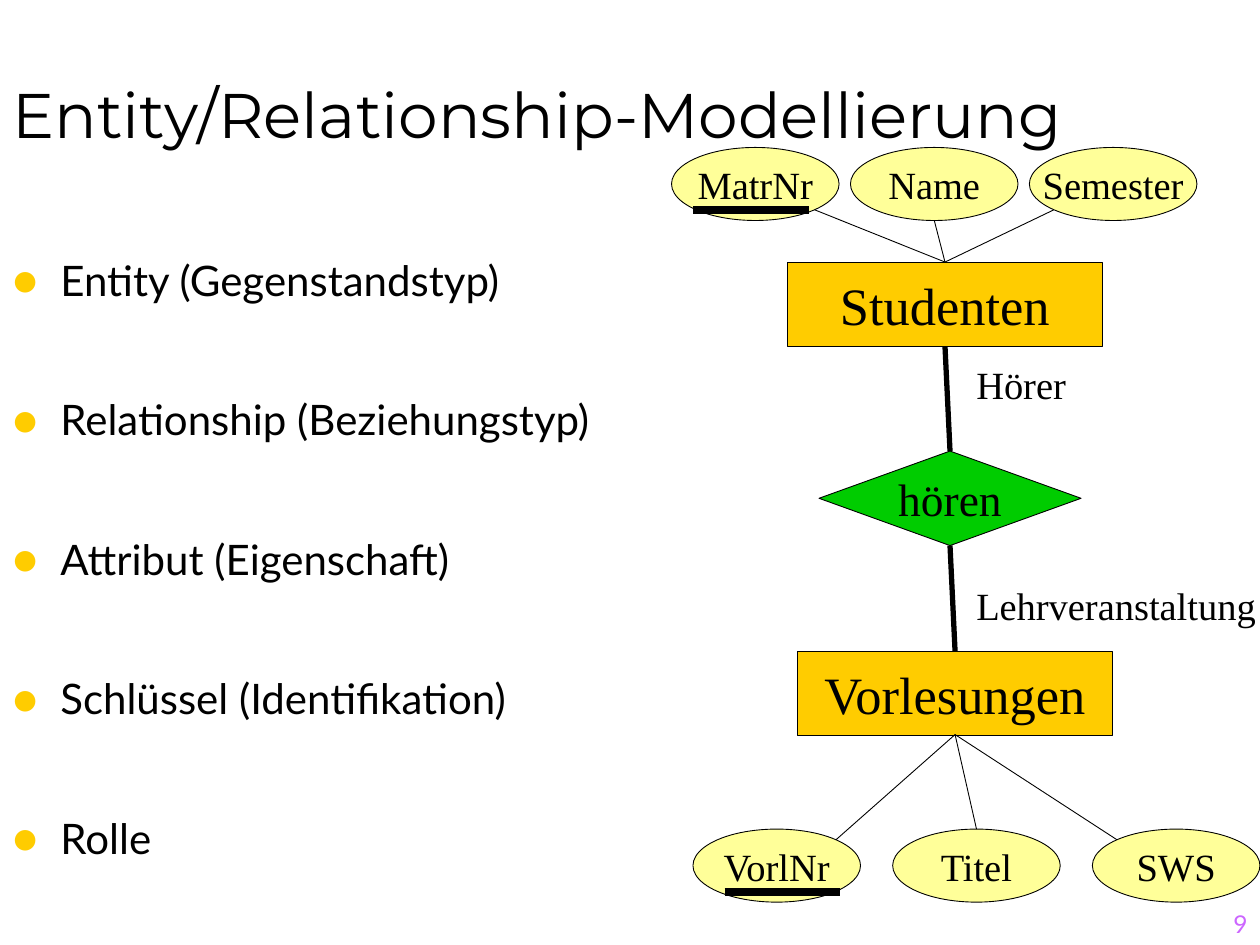
import math

from lxml import etree
from pptx import Presentation
from pptx.dml.color import RGBColor
from pptx.enum import shapes, text
from pptx.oxml import ns
from pptx.util import Inches, Pt

BLACK = RGBColor(0x00, 0x00, 0x00)
GOLD = RGBColor(0xFF, 0xCC, 0x00)
GREEN = RGBColor(0x00, 0xCC, 0x00)
YELLOW = RGBColor(0xFF, 0xFF, 0x99)
VIOLET = RGBColor(0xCC, 0x66, 0xFF)

HEADING_FONT, BODY_FONT, DIAGRAM_FONT = "Montserrat", "Lato", "Times New Roman"
SHAPE = shapes.MSO_SHAPE
ATTRIBUTE_WIDTH, ATTRIBUTE_HEIGHT = 1.33, 0.58

TOPICS = [
    "Entity (Gegenstandstyp)",
    "Relationship (Beziehungstyp)",
    "Attribut (Eigenschaft)",
    "Schlüssel (Identifikation)",
    "Rolle",
]


def place(shape, left, top, width, height):
    shape.left, shape.top = Inches(left), Inches(top)
    shape.width, shape.height = Inches(width), Inches(height)


def add_run(paragraph, content, size, font, color=BLACK):
    run = paragraph.add_run()
    run.text = content
    run.font.size = Pt(size)
    run.font.name = font
    run.font.color.rgb = color


def set_bullet(paragraph, color, indent):
    properties = paragraph._p.get_or_add_pPr()
    properties.set("marL", str(Inches(indent)))
    properties.set("indent", str(-Inches(indent)))
    bullet_color = etree.SubElement(properties, ns.qn("a:buClr"))
    etree.SubElement(bullet_color, ns.qn("a:srgbClr"), val=str(color))
    etree.SubElement(properties, ns.qn("a:buFont"), typeface=BODY_FONT)
    etree.SubElement(properties, ns.qn("a:buChar"), char="●")


def add_title(slide, content):
    title = slide.shapes.title
    place(title, 0, 0, 10, 1.25)
    frame = title.text_frame
    frame.auto_size = text.MSO_AUTO_SIZE.NONE
    frame.vertical_anchor = text.MSO_ANCHOR.BOTTOM
    paragraph = frame.paragraphs[0]
    paragraph.alignment = text.PP_ALIGN.LEFT
    add_run(paragraph, content, 36, HEADING_FONT)


def add_topics(slide, topics):
    body = slide.placeholders[1]
    place(body, 0, 1.33, 5.25, 6)
    frame = body.text_frame
    frame.auto_size = text.MSO_AUTO_SIZE.NONE
    for index, topic in enumerate(topics):
        paragraph = frame.add_paragraph() if index else frame.paragraphs[0]
        paragraph.line_spacing = 2.6
        paragraph.space_before = Pt(4.8)
        set_bullet(paragraph, GOLD, 0.38)
        add_run(paragraph, topic, 24, BODY_FONT)


def add_node(slide, kind, box, fill, label, size):
    node = slide.shapes.add_shape(kind, *map(Inches, box))
    node.shadow.inherit = False
    node.fill.solid()
    node.fill.fore_color.rgb = fill
    node.line.color.rgb = BLACK
    node.line.width = Pt(0.5)
    frame = node.text_frame
    frame.word_wrap = False
    frame.vertical_anchor = text.MSO_ANCHOR.MIDDLE
    paragraph = frame.paragraphs[0]
    paragraph.alignment = text.PP_ALIGN.CENTER
    add_run(paragraph, label, size, DIAGRAM_FONT)


def add_line(slide, start, end, width):
    line = slide.shapes.add_connector(
        shapes.MSO_CONNECTOR.STRAIGHT, *map(Inches, (*start, *end)))
    line.line.color.rgb = BLACK
    line.line.width = Pt(width)
    etree.SubElement(line._element.spPr, ns.qn("a:effectLst"))


def add_attributes(slide, names, left, top, pitch, anchor):
    """Draw a row of three attributes, each joined to its entity at anchor."""
    below = top > anchor[1]
    diagonal = math.sqrt(0.5)
    middle = top + ATTRIBUTE_HEIGHT / 2
    for index, name in enumerate(names):
        x = left + index * pitch
        add_node(slide, SHAPE.OVAL, (x, top, ATTRIBUTE_WIDTH, ATTRIBUTE_HEIGHT),
                 YELLOW, name, 22)
        # Outer ovals are joined at the diagonal facing the entity
        side = 1 - index
        reach = diagonal if side else 1
        end = (x + ATTRIBUTE_WIDTH / 2 * (1 + side * diagonal),
               middle + (-1 if below else 1) * reach * ATTRIBUTE_HEIGHT / 2)
        add_line(slide, anchor, end, 0.5)


def add_key_mark(slide, left, top):
    add_line(slide, (left, top), (left + 0.92, top), 4.5)


def add_text_box(slide, box, content, size, font, color=BLACK):
    text_box = slide.shapes.add_textbox(*map(Inches, box))
    paragraph = text_box.text_frame.paragraphs[0]
    add_run(paragraph, content, size, font, color)
    return text_box


def add_role(slide, top, width, name):
    role = add_text_box(slide, (7.65, top, width, 0.47), name, 22, DIAGRAM_FONT)
    role.text_frame.word_wrap = False
    role.text_frame.auto_size = text.MSO_AUTO_SIZE.SHAPE_TO_FIT_TEXT


def add_page_number(slide, number):
    box = add_text_box(slide, (7.92, 7, 2.08, 0.5), number, 14, BODY_FONT, VIOLET)
    frame = box.text_frame
    frame.word_wrap = True
    frame.vertical_anchor = text.MSO_ANCHOR.BOTTOM
    frame.paragraphs[0].alignment = text.PP_ALIGN.RIGHT
    frame.paragraphs[0].space_before = Pt(7)


def main():
    presentation = Presentation()
    presentation.slide_width, presentation.slide_height = Inches(10), Inches(7.5)
    slide = presentation.slides.add_slide(presentation.slide_layouts[1])

    add_page_number(slide, "9")
    add_title(slide, "Entity/Relationship-Modellierung")
    add_topics(slide, TOPICS)

    # Entities and the relationship between them
    add_node(slide, SHAPE.RECTANGLE, (6.25, 2.08, 2.5, 0.67), GOLD, "Studenten", 30)
    add_node(slide, SHAPE.RECTANGLE, (6.33, 5.17, 2.5, 0.67), GOLD, "Vorlesungen", 30)
    add_node(slide, SHAPE.DIAMOND, (6.5, 3.58, 2.08, 0.75), GREEN, "hören", 26)
    add_line(slide, (7.5, 2.75), (7.54, 3.58), 3)
    add_line(slide, (7.54, 4.33), (7.58, 5.17), 3)

    # Attributes and key underlines
    add_attributes(slide, ["VorlNr", "Titel", "SWS"], 5.5, 6.58, 1.585, (7.58, 5.83))
    add_attributes(slide, ["MatrNr", "Name", "Semester"], 5.33, 1.17, 1.42, (7.5, 2.08))
    add_key_mark(slide, 5.75, 7.08)
    add_key_mark(slide, 5.5, 1.67)

    # Roles
    add_role(slide, 2.82, 0.91, "Hörer")
    add_role(slide, 4.57, 2.43, "Lehrveranstaltung")

    presentation.save("out.pptx")


if __name__ == "__main__":
    main()
